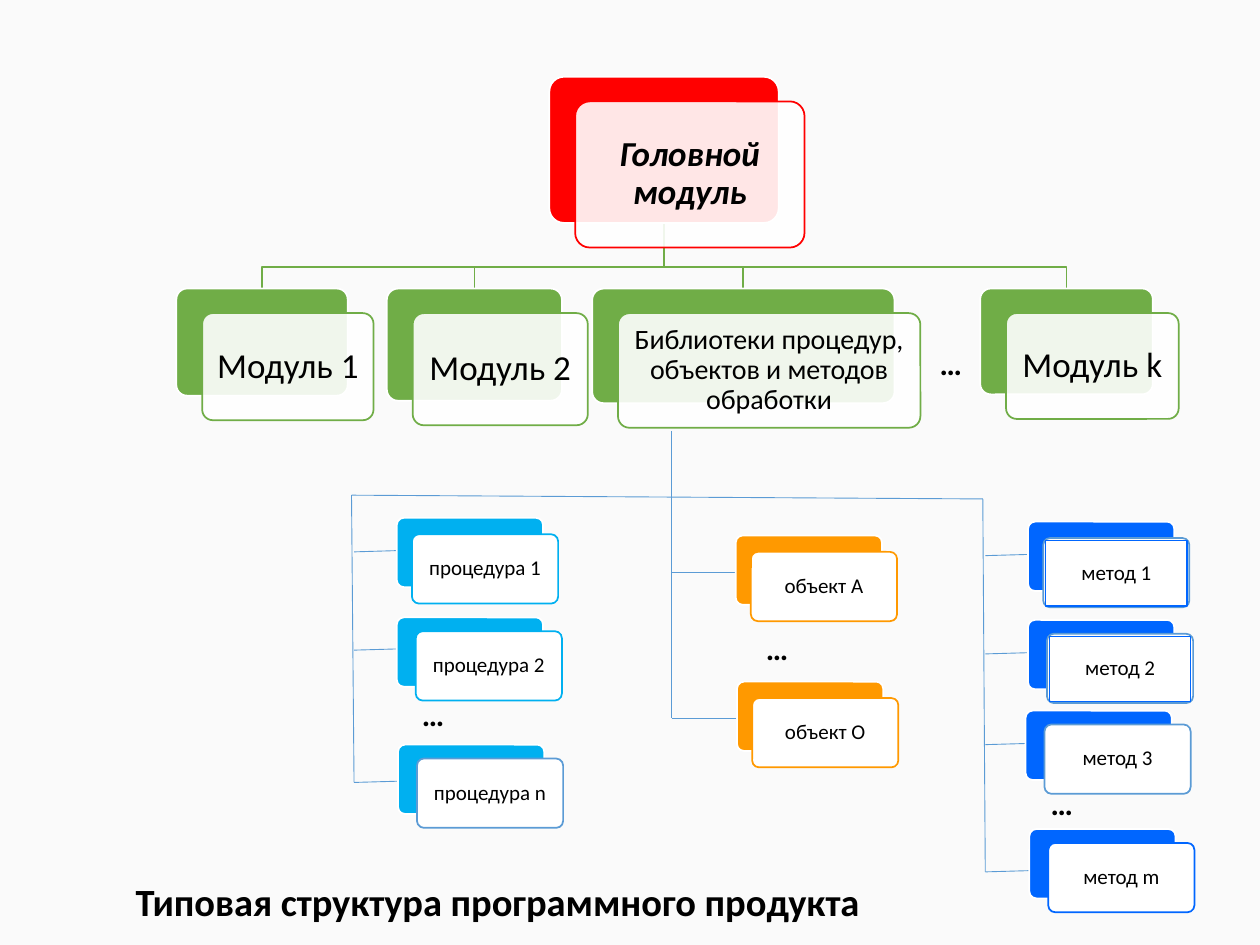
"""Draw the typical structure of a software product as a tree of cards."""
from dataclasses import dataclass

import pptx
import pptx.dml.color
import pptx.enum.shapes
import pptx.enum.text
import pptx.oxml.ns
import pptx.oxml.xmlchemy
import pptx.util

WIDE, HIGH = pptx.util.Inches(10), pptx.util.Inches(7.5)
COLS, ROWS = 100, 75
FONT = "Calibri"
BLACK, WHITE, PAPER = "000000", "FFFFFF", "FAFAFA"
RED, GREEN, ORANGE = "FF0000", "70AD47", "FF9900"
SKY, BLUE, STEEL = "00B0F0", "0066FF", "5B9BD5"
KIND = pptx.enum.shapes.MSO_SHAPE
ALIGN = pptx.enum.text.PP_ALIGN
ANCHOR = pptx.enum.text.MSO_ANCHOR


@dataclass
class Card:
    """A solid back plate and a pale front plate, in grid units."""
    text: str
    x: float
    y: float
    w: float
    h: float
    hue: str
    dx: float = 2.05
    dy: float = 1.95
    size: float = 20
    bold: bool = False
    edge: str = ""
    clear: float = 90
    frame: bool = False


@dataclass
class Leaf:
    """A small card with the row where its branch line joins the stem."""
    text: str
    x: float
    y: float
    tie: float
    dx: float = 1.5
    dy: float = 1.1
    edge: str = ""
    frame: bool = False


@dataclass
class Branch:
    """A stem from top to foot, with its leaves."""
    hue: str
    top: tuple[float, float]
    foot: tuple[float, float]
    reach: float
    rise: float
    leaves: list[Leaf]


HEAD = Card("Головной модуль", 43.6, 6.1, 18.2, 11.6, RED, bold=True)
UNITS = [
    Card("Модуль 1", 14, 22.9, 13.6, 8.5, GREEN),
    Card("Модуль 2", 30.7, 22.9, 13.9, 8.9, GREEN),
    Card("Библиотеки процедур, объектов и методов обработки",
         47, 22.9, 24, 9.1, GREEN, size=16),
    Card("Модуль k", 77.8, 22.9, 13.7, 8.4, GREEN),
]
BRANCHES = [
    Branch(SKY, (27.9, 39.3), (28.1, 62.1), 3.5, 0.1, [
        Leaf("процедура 1", 31.5, 41.1, 43.8, 1.2, 1.3),
        Leaf("процедура 2", 31.5, 49, 51.6),
        Leaf("процедура n", 31.6, 59.1, 62.1, edge=STEEL),
    ]),
    Branch(ORANGE, (53.3, 34.2), (53.3, 57), 5.1, 0, [
        Leaf("объект А", 58.4, 42.5, 45.4, 1.2, 1.3),
        Leaf("объект О", 58.5, 54.1, 57, 1.2, 1.3),
    ]),
    Branch(BLUE, (78, 39.6), (78.2, 69.2), 3.5, 0.1, [
        Leaf("метод 1", 81.6, 41.4, 44.1, 1.2, 1.3, STEEL, True),
        Leaf("метод 2", 81.6, 49.2, 51.9, edge=STEEL, frame=True),
        Leaf("метод 3", 81.4, 56.4, 59.1, edge=STEEL),
        Leaf("метод m", 81.7, 65.8, 69.2),
    ]),
]
DOTS = [(73.6, 26.8), (32.5, 54.7), (59.8, 49.4), (82.4, 61.7)]


def col(n: float) -> int:
    """Turn grid columns into a length."""
    return round(WIDE * n / COLS)


def row(n: float) -> int:
    """Turn grid rows into a length."""
    return round(HIGH * n / ROWS)


def grid(x: float, y: float, w: float, h: float) -> tuple[int, ...]:
    """Turn a grid box into left, top, width and height."""
    return col(x), row(y), col(w), row(h)


def paint(fmt, hue: str, clear: float = 100) -> None:
    """Fill with a hex colour at a given opacity in percent."""
    fmt.solid()
    fmt.fore_color.rgb = pptx.dml.color.RGBColor.from_string(hue)
    if clear < 100:
        tint = fmt._xPr.find(".//" + pptx.oxml.ns.qn("a:srgbClr"))
        alpha = pptx.oxml.xmlchemy.OxmlElement("a:alpha")
        alpha.set("val", str(round(clear * 1000)))
        tint.append(alpha)


def write(shape, text: str, size: float = 12, bold: bool = False,
          slant: bool = False, align=ALIGN.CENTER, anchor=ANCHOR.MIDDLE,
          pad: tuple[float, float] = (0.07, 0.07), lead: float = 0.9) -> None:
    """Put one formatted paragraph in a shape."""
    frame = shape.text_frame
    frame.word_wrap = True
    frame.vertical_anchor = anchor
    frame.margin_left = frame.margin_right = pptx.util.Inches(pad[0])
    frame.margin_top = frame.margin_bottom = pptx.util.Inches(pad[1])
    para = frame.paragraphs[0]
    para.alignment, para.line_spacing = align, lead
    run = para.add_run()
    run.text = text
    font = run.font
    font.name, font.size = FONT, pptx.util.Pt(size)
    font.bold, font.italic = bold, slant
    paint(font.fill, BLACK)


def label(slide, box: tuple[int, ...], text: str, **style) -> None:
    """Add a free text box."""
    write(slide.shapes.add_textbox(*box), text, pad=(0.1, 0.05), lead=1, **style)


def plate(slide, box: tuple[int, ...], hue: str, edge: str,
          clear: float = 100, kind=KIND.ROUNDED_RECTANGLE, width: float = 1):
    """Add a filled and outlined plate; an empty hue leaves it hollow."""
    shape = slide.shapes.add_shape(kind, *box)
    shape.shadow.inherit = False
    if kind == KIND.ROUNDED_RECTANGLE:
        shape.adjustments[0] = 0.1
    if hue:
        paint(shape.fill, hue, clear)
    else:
        shape.fill.background()
    paint(shape.line.fill, edge)
    shape.line.width = pptx.util.Pt(width)
    return shape


def draw(slide, card: Card) -> None:
    """Add a card with its text on the front plate."""
    x, y = card.x + card.dx, card.y + card.dy
    plate(slide, grid(card.x, card.y, card.w, card.h), card.hue, WHITE)
    face = plate(slide, grid(x, y, card.w, card.h), WHITE,
                 card.edge or card.hue, card.clear)
    if card.frame:
        inner = grid(x + 0.2, y + 0.2, card.w - 0.4, card.h - 0.3)
        face = plate(slide, inner, "", card.hue,
                     kind=KIND.RECTANGLE, width=0.75)
    write(face, card.text, size=card.size, bold=card.bold, slant=card.bold)


def link(slide, start: tuple[float, float], end: tuple[float, float]) -> None:
    """Add a thin straight line between two grid points."""
    line = slide.shapes.add_connector(
        pptx.enum.shapes.MSO_CONNECTOR.STRAIGHT,
        col(start[0]), row(start[1]), col(end[0]), row(end[1]))
    paint(line.line.fill, STEEL)
    line.line.width = pptx.util.Pt(0.5)
    line._element.spPr.append(pptx.oxml.xmlchemy.OxmlElement("a:effectLst"))


def elbow(slide, card: Card) -> None:
    """Add the bent line from the head card down to a unit card."""
    top, mid = HEAD.x + HEAD.w / 2, 21.2
    end = card.x + card.w / 2
    build = slide.shapes.build_freeform(col(top), row(HEAD.y + HEAD.h))
    build.add_line_segments(
        [(col(top), row(mid)), (col(end), row(mid)), (col(end), row(card.y))],
        close=False)
    shape = build.convert_to_shape()
    shape.shadow.inherit = False
    shape.fill.background()
    paint(shape.line.fill, GREEN)
    shape.line.width = pptx.util.Pt(1)


def grow(slide, branch: Branch) -> None:
    """Add a branch with its stem, ties and leaf cards."""
    link(slide, branch.top, branch.foot)
    for leaf in branch.leaves:
        link(slide, (branch.foot[0], leaf.tie),
             (branch.foot[0] + branch.reach, leaf.tie - branch.rise))
        draw(slide, Card(leaf.text, leaf.x, leaf.y, 11.6, 5.5, branch.hue,
                         leaf.dx, leaf.dy, 12, edge=leaf.edge, clear=100,
                         frame=leaf.frame))


def main() -> None:
    """Build the slide and save it."""
    deck = pptx.Presentation()
    deck.slide_width, deck.slide_height = WIDE, HIGH
    slide = deck.slides.add_slide(deck.slide_layouts[6])
    paint(slide.background.fill, PAPER)
    label(slide, grid(1.7, 69.2, 75.6, 4.7),
          "Типовая структура программного продукта", size=22, bold=True)
    for unit in reversed(UNITS):
        elbow(slide, unit)
    for card in [HEAD, *UNITS]:
        draw(slide, card)
    link(slide, BRANCHES[0].top, BRANCHES[-1].top)
    for branch in BRANCHES:
        grow(slide, branch)
    for x, y in DOTS:
        label(slide, grid(x, y, 5.2, 4.1), "…", size=18, bold=True,
              align=ALIGN.LEFT, anchor=ANCHOR.TOP)
    deck.save("out.pptx")


if __name__ == "__main__":
    main()
